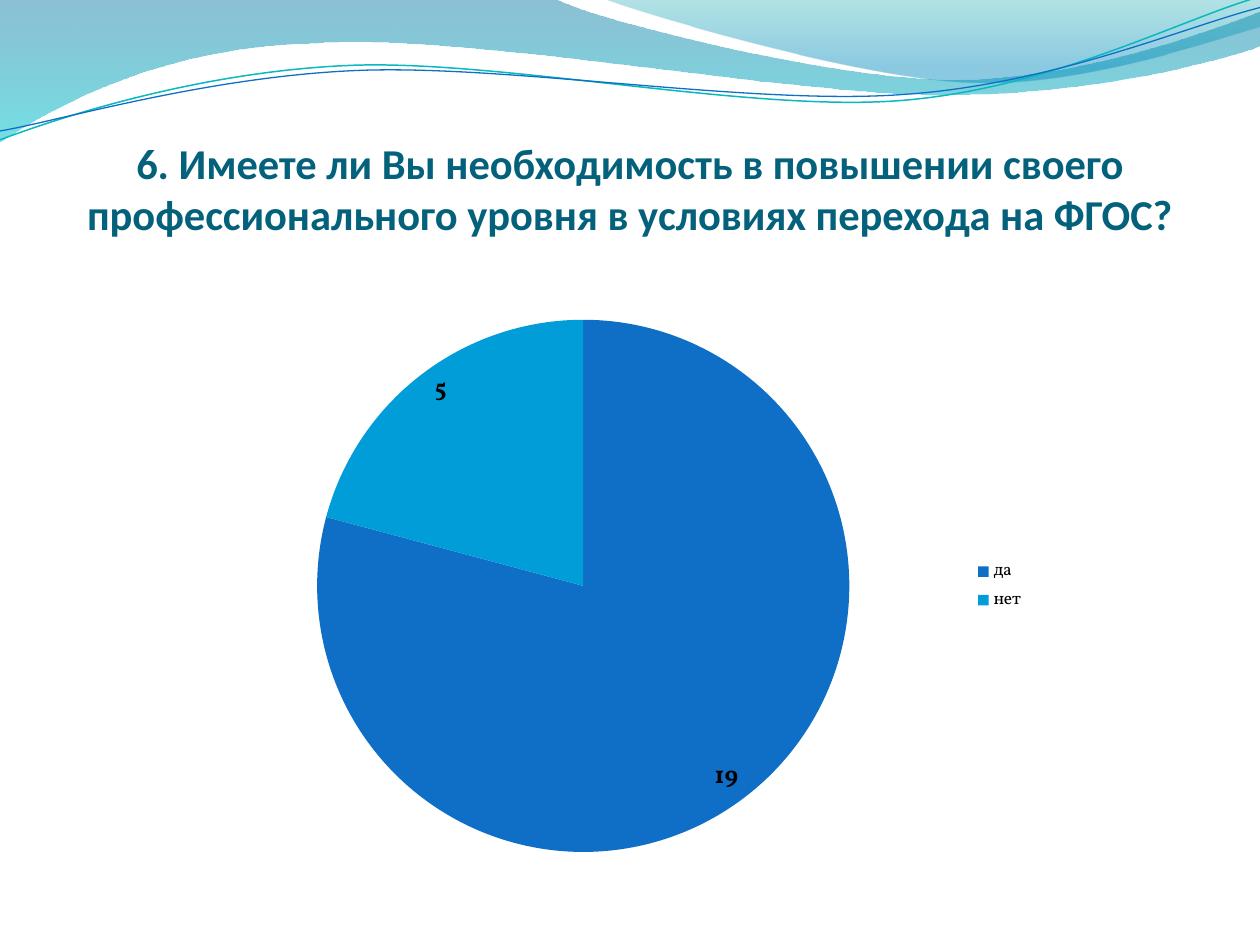
import lxml.etree
import pptx
import pptx.chart.data
import pptx.dml.color
import pptx.enum.chart
import pptx.enum.text
import pptx.oxml.ns
import pptx.util

Inches = pptx.util.Inches
qn = pptx.oxml.ns.qn


def colour(hex_text):
    return pptx.dml.color.RGBColor.from_string(hex_text)


def apply_format(target, values):
    for name, value in values.items():
        setattr(target, name, value)


def add_element(parent, tag, **attributes):
    return lxml.etree.SubElement(parent, qn(tag), **attributes)


def as_points(numbers):
    """Pair up inch values as points in EMU."""
    lengths = [Inches(number) for number in numbers]
    return list(zip(lengths[::2], lengths[1::2]))


class SlideBuilder:
    title_font = "Calibri"
    chart_font = "Vollkorn"
    title_colour = "04617B"

    def __init__(self, slide):
        self.slide = slide

    def outline(self, segments, close):
        """Draw a start point, then lines (2 numbers) and cubic curves (6 numbers)."""
        start, *steps = [as_points(segment) for segment in segments]
        builder = self.slide.shapes.build_freeform(*start[0])
        builder.add_line_segments([step[-1] for step in steps], close=close)
        shape = builder.convert_to_shape()
        shape.shadow.inherit = False
        # Bend the straight segments that have control points
        lines = list(shape._element.iter(qn("a:lnTo")))
        for line, step in zip(lines, steps):
            if len(step) == 3:
                bend = lxml.etree.Element(qn("a:cubicBezTo"))
                for x, y in step:
                    add_element(bend, "a:pt", x=str(x - shape.left), y=str(y - shape.top))
                line.getparent().replace(line, bend)
        return shape

    def wave(self, segments, stops):
        shape = self.outline(segments, close=True)
        shape.line.fill.background()
        shape.fill.gradient()
        shape.fill.gradient_angle = 270
        for stop, (position, hex_text, _) in zip(shape.fill.gradient_stops, stops):
            stop.position = position
            stop.color.rgb = colour(hex_text)
        nodes = shape._element.spPr.iter(qn("a:srgbClr"))
        for node, (_, _, opacity) in zip(list(nodes), stops):
            add_element(node, "a:alpha", val=str(opacity * 1000))

    def curve(self, segments, hex_text, width):
        shape = self.outline(segments, close=False)
        shape.fill.background()
        shape.line.color.rgb = colour(hex_text)
        shape.line.width = pptx.util.Pt(width)

    def title(self, text, left, top, width, height):
        box = self.slide.shapes.add_textbox(
            Inches(left), Inches(top), Inches(width), Inches(height))
        apply_format(box.text_frame, {
            "word_wrap": True,
            "vertical_anchor": pptx.enum.text.MSO_ANCHOR.BOTTOM,
            "margin_left": 0, "margin_right": 0,
            "margin_top": Inches(0.05), "margin_bottom": Inches(0.75),
        })
        para = box.text_frame.paragraphs[0]
        para.alignment = pptx.enum.text.PP_ALIGN.CENTER
        span = para.add_run()
        span.text = text
        apply_format(span.font, {
            "name": self.title_font, "size": pptx.util.Pt(24.3), "bold": True})
        span.font.color.rgb = colour(self.title_colour)

    def pie(self, answers, left, top, width, height):
        data = pptx.chart.data.CategoryChartData()
        data.categories = [name for name, _, _ in answers]
        data.add_series("Series 1", [count for _, count, _ in answers])
        chart = self.slide.shapes.add_chart(
            pptx.enum.chart.XL_CHART_TYPE.PIE, Inches(left), Inches(top),
            Inches(width), Inches(height), data).chart
        apply_format(chart, {"has_title": False, "has_legend": True})
        apply_format(chart.legend, {
            "position": pptx.enum.chart.XL_LEGEND_POSITION.RIGHT,
            "include_in_layout": False})
        plot = chart.plots[0]
        apply_format(plot, {"vary_by_categories": True, "has_data_labels": True})
        labels = plot.data_labels
        apply_format(labels, {
            "show_value": True, "show_percentage": False,
            "position": pptx.enum.chart.XL_LABEL_POSITION.BEST_FIT})
        for font, size, bold in ((chart.font, 10, False), (labels.font, 14, True)):
            apply_format(font, {
                "name": self.chart_font, "size": pptx.util.Pt(size), "bold": bold})
            font.color.rgb = colour("000000")
        for index, (_, _, hex_text) in enumerate(answers):
            fill = plot.series[0].points[index].format.fill
            fill.solid()
            fill.fore_color.rgb = colour(hex_text)


def main():
    deck = pptx.Presentation()
    deck.slide_width, deck.slide_height = Inches(10), Inches(7.5)
    page = SlideBuilder(deck.slides.add_slide(deck.slide_layouts[6]))

    # Waves along the top edge
    page.wave(
        [(0, 0), (4.4, -0.01), (4.76, 0.17, 6.64, 0.63, 7.58, 0.63),
         (8.53, 0.63, 9.58, 0.26, 10, 0.09), (10.01, 0.36),
         (9.83, 0.44, 8.7, 0.76, 7.46, 0.75), (6.22, 0.75, 3.82, 0.28, 2.57, 0.34),
         (1.29, 0.36, 0.46, 0.83, -0.01, 1.13)],
        [(0, "0074A1", 45), (1, "00C6CF", 55)])
    page.wave(
        [(4.79, -0.01), (5.09, 0.11, 6.82, 0.62, 7.69, 0.65),
         (8.56, 0.69, 9.61, 0.32, 10, 0.21), (10, 0)],
        [(0, "00A1A9", 30), (0.8, "008BBF", 45)])

    # Thin curves below the waves
    page.curve(
        [(0, 1.11), (0.48, 0.93, 1.58, 0.57, 2.77, 0.52),
         (3.95, 0.47, 5.93, 0.89, 7.13, 0.8), (8.33, 0.71, 9.38, 0.15, 9.98, -0.02)],
        "0AB8BF", 0.85)
    page.curve(
        [(0, 1.04), (0.47, 0.96, 1.64, 0.61, 2.83, 0.56),
         (4.03, 0.51, 5.97, 0.84, 7.17, 0.75), (8.36, 0.67, 9.41, 0.21, 10, 0.06)],
        "0F6FC6", 0.75)

    # Question and answers
    page.title("6. Имеете ли Вы необходимость в повышении своего "
               "профессионального уровня в условиях перехода на ФГОС?",
               0.5, 0.77, 9, 1.88)
    page.pie([("да", 19, "0F6FC6"), ("нет", 5, "009DD9")], 1.54, 2.4, 6.69, 4.5)

    deck.save("out.pptx")


if __name__ == "__main__":
    main()
